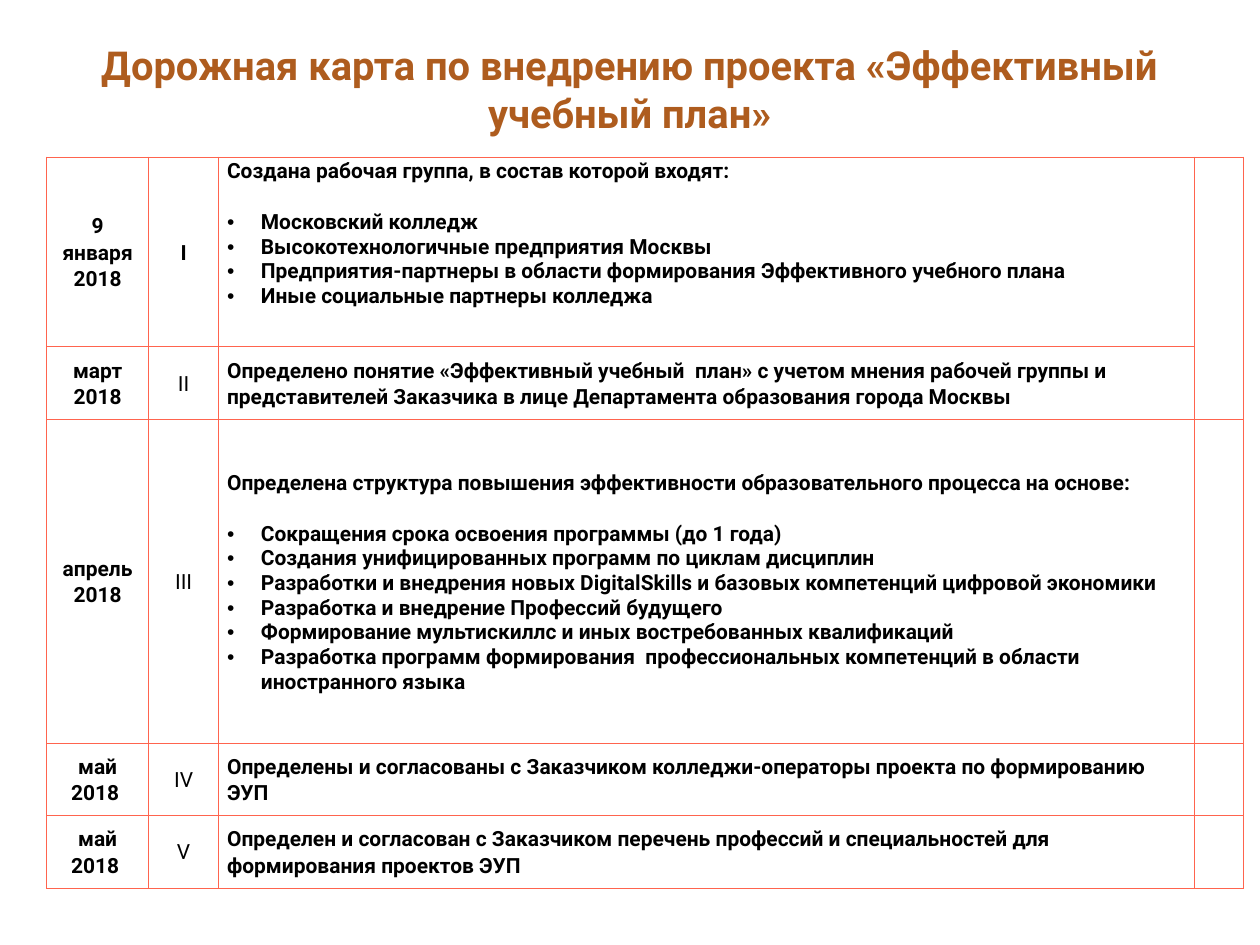
"""Build the roadmap slide for the efficient curriculum project."""
from dataclasses import dataclass

from lxml.etree import SubElement
from pptx import Presentation
from pptx.dml.color import RGBColor
from pptx.enum.text import MSO_ANCHOR as Anchor, PP_ALIGN as Align
from pptx.oxml import parse_xml
from pptx.oxml.ns import nsdecls, qn
from pptx.slide import Slide
from pptx.table import Table, _Cell as Cell
from pptx.text.text import _Paragraph as Paragraph
from pptx.util import Cm, Pt

FONT = "Roboto"
BROWN = RGBColor(0xAE, 0x5C, 0x1E)
BLACK = RGBColor(0x00, 0x00, 0x00)
WHITE = RGBColor(0xFF, 0xFF, 0xFF)
CORAL = RGBColor(0xFF, 0x64, 0x4E)
TITLE = "Дорожная карта по внедрению проекта «Эффективный учебный план»"
TITLE_SIZE = 32.4
BODY_SIZE = 17
LINE_SPACING = 1.07
BULLET_INDENT = Cm(0.97)
COLUMN_WIDTHS = (2.92, 2.01, 27.97, 1.42)


@dataclass(frozen=True)
class Stage:
    """One row of the roadmap."""

    date: str
    number: str
    summary: str
    height: float
    points: tuple[str, ...] = ()
    number_bold: bool = False
    anchor: Anchor = Anchor.MIDDLE
    align: Align = Align.LEFT


STAGES = (
    Stage("9 января 2018", "I", "Создана рабочая группа, в состав которой входят:", 5.44, (
        "Московский колледж",
        "Высокотехнологичные предприятия Москвы",
        "Предприятия-партнеры в области формирования Эффективного учебного плана",
        "Иные социальные партнеры колледжа",
    ), number_bold=True, anchor=Anchor.TOP, align=Align.JUSTIFY),
    Stage("март 2018", "II",
          "Определено понятие «Эффективный учебный  план» с учетом мнения рабочей группы и "
          "представителей Заказчика в лице Департамента образования города Москвы", 2.08),
    Stage("апрель 2018", "III",
          "Определена структура повышения эффективности образовательного процесса на основе:", 9.3, (
              "Сокращения срока освоения программы (до 1 года)",
              "Создания унифицированных программ по циклам дисциплин",
              "Разработки и внедрения новых DigitalSkills и базовых компетенций цифровой экономики",
              "Разработка и внедрение Профессий будущего",
              "Формирование мультискиллс и иных востребованных квалификаций",
              "Разработка программ формирования  профессиональных компетенций в области "
              "иностранного языка",
          )),
    Stage("май 2018 ", "IV",
          "Определены и согласованы с Заказчиком колледжи-операторы проекта по формированию ЭУП", 2.06),
    Stage("май 2018 ", "V",
          "Определен и согласован с Заказчиком перечень профессий и специальностей для "
          "формирования проектов ЭУП", 2.08),
)


def add_run(paragraph: Paragraph, text: str, size: float = BODY_SIZE,
            color: RGBColor = BLACK, bold: bool = True) -> None:
    """Append a formatted run."""
    run = paragraph.add_run()
    run.text = text
    run.font.name = FONT
    run.font.size = Pt(size)
    run.font.bold = bold
    run.font.color.rgb = color


def add_title(slide: Slide) -> None:
    """Add the centred heading."""
    shape = slide.shapes.add_textbox(Cm(1.8), Cm(1.09), Cm(32.51), Cm(2.9))
    frame = shape.text_frame
    frame.word_wrap = True
    frame.vertical_anchor = Anchor.MIDDLE
    frame.margin_left = frame.margin_right = Cm(0.15)
    frame.margin_top = frame.margin_bottom = Cm(0.15)
    paragraph = frame.paragraphs[0]
    paragraph.alignment = Align.CENTER
    add_run(paragraph, TITLE, TITLE_SIZE, BROWN)


def style_cell(cell: Cell) -> None:
    """Give a cell its translucent fill and coral borders."""
    cell.fill.solid()
    cell.fill.fore_color.rgb = WHITE
    properties = cell._tc.get_or_add_tcPr()
    SubElement(properties.find(qn("a:solidFill"))[0], qn("a:alpha"), val="14000")
    for index, side in enumerate(("lnL", "lnR", "lnT", "lnB")):
        properties.insert(index, parse_xml(
            f'<a:{side} {nsdecls("a")} w="{Pt(1)}"><a:solidFill>'
            f'<a:srgbClr val="{CORAL}"/></a:solidFill></a:{side}>'))


def start_cell(cell: Cell, text: str, align: Align, bold: bool = True,
               anchor: Anchor = Anchor.MIDDLE) -> Paragraph:
    """Write the first paragraph of a cell and return it."""
    cell.margin_left = cell.margin_right = Cm(0.24)
    cell.margin_top = cell.margin_bottom = Cm(0)
    cell.vertical_anchor = anchor
    paragraph = cell.text_frame.paragraphs[0]
    paragraph.alignment = align
    paragraph.line_spacing = LINE_SPACING
    add_run(paragraph, text, bold=bold)
    return paragraph


def add_bullet(cell: Cell, text: str, align: Align) -> None:
    """Append a bulleted paragraph to a cell."""
    paragraph = cell.text_frame.add_paragraph()
    paragraph.alignment = align
    properties = paragraph._p.get_or_add_pPr()
    properties.set("marL", str(BULLET_INDENT))
    properties.set("indent", str(-BULLET_INDENT))
    SubElement(properties, qn("a:buFont"), typeface="Arial")
    SubElement(properties, qn("a:buChar"), char="•")
    add_run(paragraph, text)


def fill_stage(table: Table, row: int, stage: Stage) -> None:
    """Write one stage into its table row."""
    table.rows[row].height = Cm(stage.height)
    start_cell(table.cell(row, 0), stage.date, Align.CENTER)
    start_cell(table.cell(row, 1), stage.number, Align.CENTER, stage.number_bold)
    content = table.cell(row, 2)
    summary = start_cell(content, stage.summary, stage.align, anchor=stage.anchor)
    if stage.points:
        summary.space_after = Pt(21.4)
    for point in stage.points:
        add_bullet(content, point, stage.align)


def add_roadmap(slide: Slide) -> None:
    """Add the table of stages."""
    shape = slide.shapes.add_table(
        len(STAGES), len(COLUMN_WIDTHS), Cm(1.34), Cm(4.51),
        Cm(sum(COLUMN_WIDTHS)), Cm(sum(stage.height for stage in STAGES)))
    table = shape.table
    table.first_row = False
    table.horz_banding = False
    for column, width in zip(table.columns, COLUMN_WIDTHS):
        column.width = Cm(width)
    for cell in table.iter_cells():
        style_cell(cell)
    for row, stage in enumerate(STAGES):
        fill_stage(table, row, stage)
    table.cell(0, 3).merge(table.cell(1, 3))


def main() -> None:
    """Create and save the presentation."""
    presentation = Presentation()
    presentation.slide_width = Cm(36.12)
    presentation.slide_height = Cm(27.1)
    slide = presentation.slides.add_slide(presentation.slide_layouts[6])
    add_title(slide)
    add_roadmap(slide)
    presentation.save("out.pptx")


if __name__ == "__main__":
    main()
